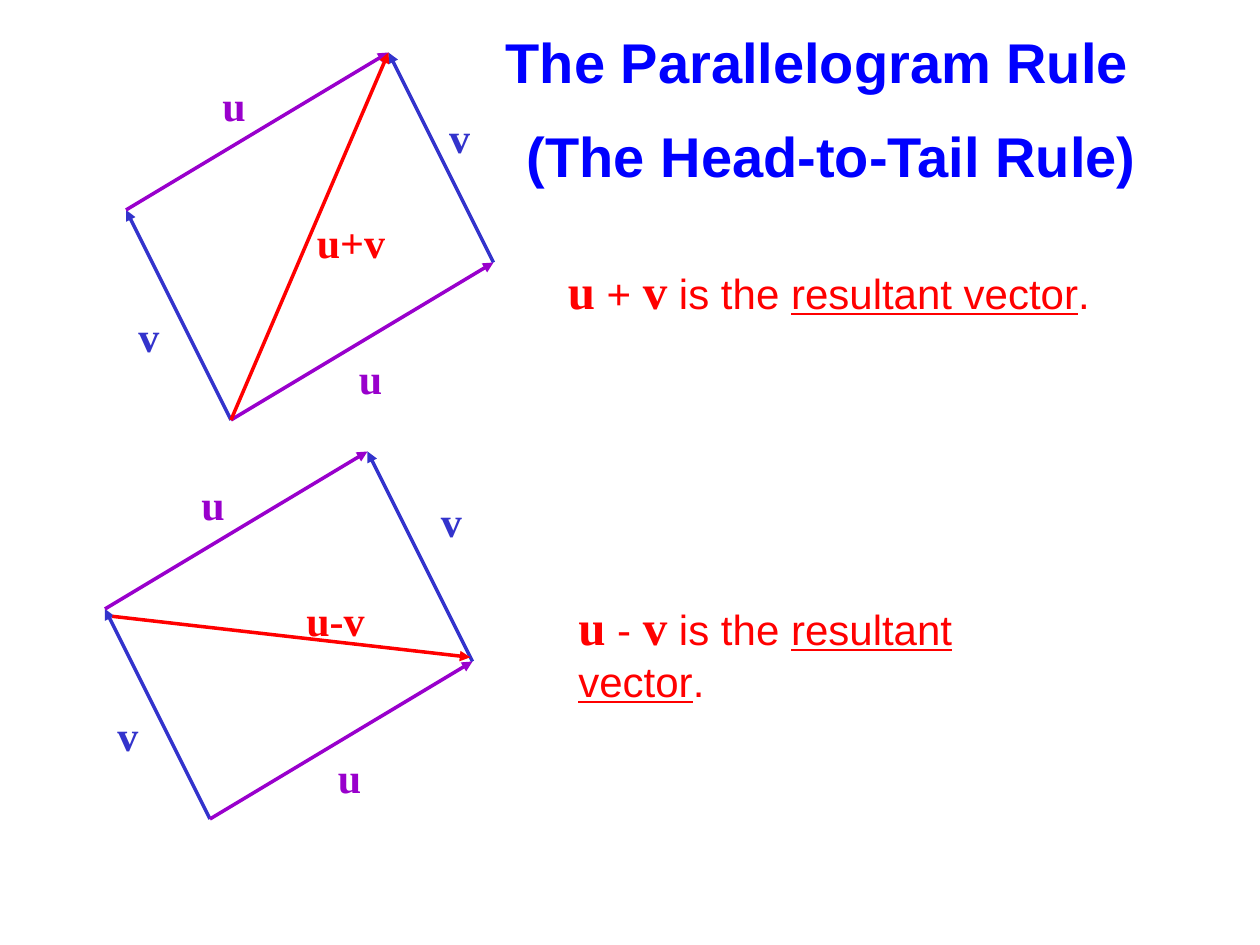
from lxml import etree
from pptx import Presentation, util as u
from pptx.dml.color import RGBColor
from pptx.enum import shapes, text
from pptx.oxml.ns import qn

UNIT = u.Inches(1) / 12  # the drawing sits on a grid of twelfths of an inch
SERIF, SANS = "Times New Roman", "Arial"
BLUE, PURPLE, RED, TITLE_BLUE = "3333CC", "9900CC", "FF0000", "0000FF"

prs = Presentation()
prs.slide_width, prs.slide_height = u.Inches(10), u.Inches(7.5)
slide = prs.slides.add_slide(prs.slide_layouts[6])


def vector(tail, head, color):
    """Draw an arrow between two grid points."""
    ends = [round(n * UNIT) for n in (*tail, *head)]
    arrow = slide.shapes.add_connector(shapes.MSO_CONNECTOR.STRAIGHT, *ends)
    arrow.line.width = u.Pt(2)
    arrow.line.color.rgb = RGBColor.from_string(color)
    etree.SubElement(arrow.line._get_or_add_ln(), qn("a:tailEnd"), type="triangle")
    etree.SubElement(arrow._element.spPr, qn("a:effectLst"))


def write(x, y, width, height, color, parts, wrap=True):
    """Write one line at a grid point; parts are (words, font, size, bold, underline)."""
    box = slide.shapes.add_textbox(*(round(n * UNIT) for n in (x, y, width, height)))
    frame = box.text_frame
    frame.word_wrap = wrap
    frame.auto_size = text.MSO_AUTO_SIZE.SHAPE_TO_FIT_TEXT
    for words, font, size, bold, underline in parts:
        run = frame.paragraphs[0].add_run()
        run.text = words
        run.font.name, run.font.size = font, u.Pt(size)
        run.font.bold, run.font.underline = bold, underline
        run.font.color.rgb = RGBColor.from_string(color)


# Each rule: base corner, diagonal, sign, right v label, diagonal label,
# then left, top and width of the sentence
rules = [
    ((22, 40), ((22, 40), (37, 5)), "+", (19.6, -30), (7, -20, 8.9), (52.9, 24.2, 53)),
    ((20, 78), ((10.7, 58.7), (44.8, 62.6)), "-", (20.8, -31.4), (8, -22, 8), (53.9, 56.2, 50.5)),
]
for (x, y), diagonal, sign, right_v, result, sentence in rules:
    far_u, far_v = (x + 25, y - 15), (x - 10, y - 20)
    corner = (x + 15, y - 35)
    vector((x, y), far_v, BLUE)
    vector(far_u, corner, BLUE)
    vector((x, y), far_u, PURPLE)
    vector(far_v, corner, PURPLE)
    vector(*diagonal, RED)

    labels = [
        ("v", BLUE, *right_v, 4.4),
        ("v", BLUE, -10, -11, 4.4),
        ("u", PURPLE, 11, -7, 4.7),
        ("u", PURPLE, -2, -33, 4.7),
        (f"u{sign}v", RED, *result),
    ]
    for name, color, dx, dy, width in labels:
        write(x + dx, y + dy, width, 6, color, [(name, SERIF, 24, True, False)], wrap=False)

    write(*sentence, 6.8, RED, [
        ("u", SERIF, 28, True, False),
        (f" {sign} ", SANS, 24, False, False),
        ("v", SERIF, 28, True, False),
        (" is the ", SANS, 24, False, False),
        ("resultant vector", SANS, 24, False, True),
        (".", SANS, 24, False, False),
    ])

write(47, 2, 65, 7.7, TITLE_BLUE, [("The Parallelogram Rule", SANS, 32, True, False)])
write(49, 11, 61, 7.7, TITLE_BLUE, [("(The Head-to-Tail Rule)", SANS, 32, True, False)])

prs.save("out.pptx")
